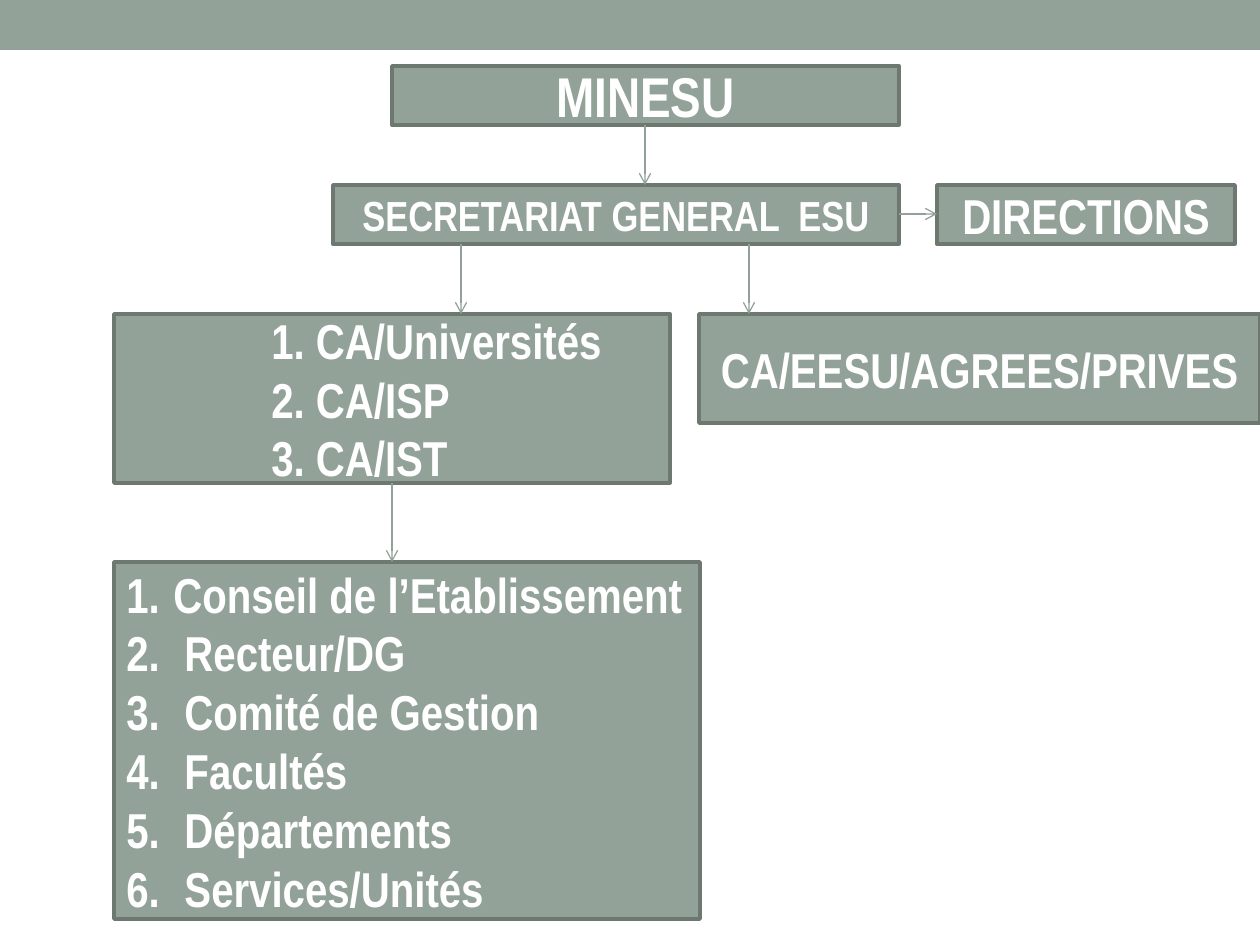
from pptx import Presentation
from pptx.dml.color import RGBColor as RGB
from pptx.enum.shapes import MSO_CONNECTOR as CONN, MSO_SHAPE as SHAPE
from pptx.enum.text import MSO_ANCHOR as ANCHOR, PP_ALIGN as ALIGN
from pptx.oxml.ns import qn
from pptx.util import Pt
from lxml.etree import SubElement as Sub

PX = 914400 / 126
HUES = {"sage": "93A299", "edge": "6D7871", "text": "FFFFFF"}


def emu(*vals):
    return [round(v * PX) for v in vals]


def add_box(place, lines=(), size=28, align=ALIGN.CENTER):
    box = slide.shapes.add_shape(SHAPE.RECTANGLE, *emu(*place))
    box.shadow.inherit = False
    box.fill.solid()
    box.fill.fore_color.rgb = RGB.from_string(HUES["sage"])
    box.line.color.rgb = RGB.from_string(HUES["edge"])
    box.line.width = Pt(2.08)
    frame = box.text_frame
    frame.word_wrap = True
    frame.vertical_anchor = ANCHOR.MIDDLE
    for i, line in enumerate(lines):
        para = frame.add_paragraph() if i else frame.paragraphs[0]
        para.alignment = align
        run = para.add_run()
        run.text = line
        font = run.font
        font.name, font.size, font.bold = "Arial Narrow", Pt(size), True
        font.color.rgb = RGB.from_string(HUES["text"])
    return box


deck = Presentation()
deck.slide_width, deck.slide_height = emu(1260, 945)
slide = deck.slides.add_slide(deck.slide_layouts[6])

# Top band
band = add_box((0, 0, 1260, 50))
band.line.fill.background()

# Single-line boxes
add_box((392, 66, 507, 59), ["MINESU"], 32)
add_box((333, 185, 566, 59), ["SECRETARIAT GENERAL  ESU"], 24)
add_box((937, 185, 298, 59), ["DIRECTIONS"])
add_box((699, 314, 561, 109), ["CA/EESU/AGREES/PRIVES"])

# Councils, set in from the left
names = ["1. CA/Universités", "2. CA/ISP", "3. CA/IST"]
council = add_box((114, 314, 556, 169), names, align=ALIGN.LEFT)
for para in council.text_frame.paragraphs:
    para._p.get_or_add_pPr().set("marL", str(emu(145)[0]))

# Numbered bodies of the school
names = ["Conseil de l’Etablissement", " Recteur/DG", " Comité de Gestion",
         " Facultés", " Départements", " Services/Unités"]
bodies = add_box((114, 562, 586, 357), names, align=ALIGN.LEFT)
hang = emu(47)[0]
for para in bodies.text_frame.paragraphs:
    props = para._p.get_or_add_pPr()
    props.set("marL", str(hang))
    props.set("indent", str(-hang))
    Sub(props, qn("a:buFont"), typeface="+mj-lt")
    Sub(props, qn("a:buAutoNum"), type="arabicPeriod")

# Arrows
for ends in [(645, 125, 645, 185), (899, 214, 937, 214), (749, 244, 749, 314),
             (461, 244, 461, 314), (392, 483, 392, 562)]:
    arrow = slide.shapes.add_connector(CONN.STRAIGHT, *emu(*ends))
    arrow.line.color.rgb = RGB.from_string(HUES["sage"])
    arrow.line.width = Pt(0.75)
    Sub(arrow.line._get_or_add_ln(), qn("a:tailEnd"), type="arrow")
    Sub(arrow._element.spPr, qn("a:effectLst"))

deck.save("out.pptx")
